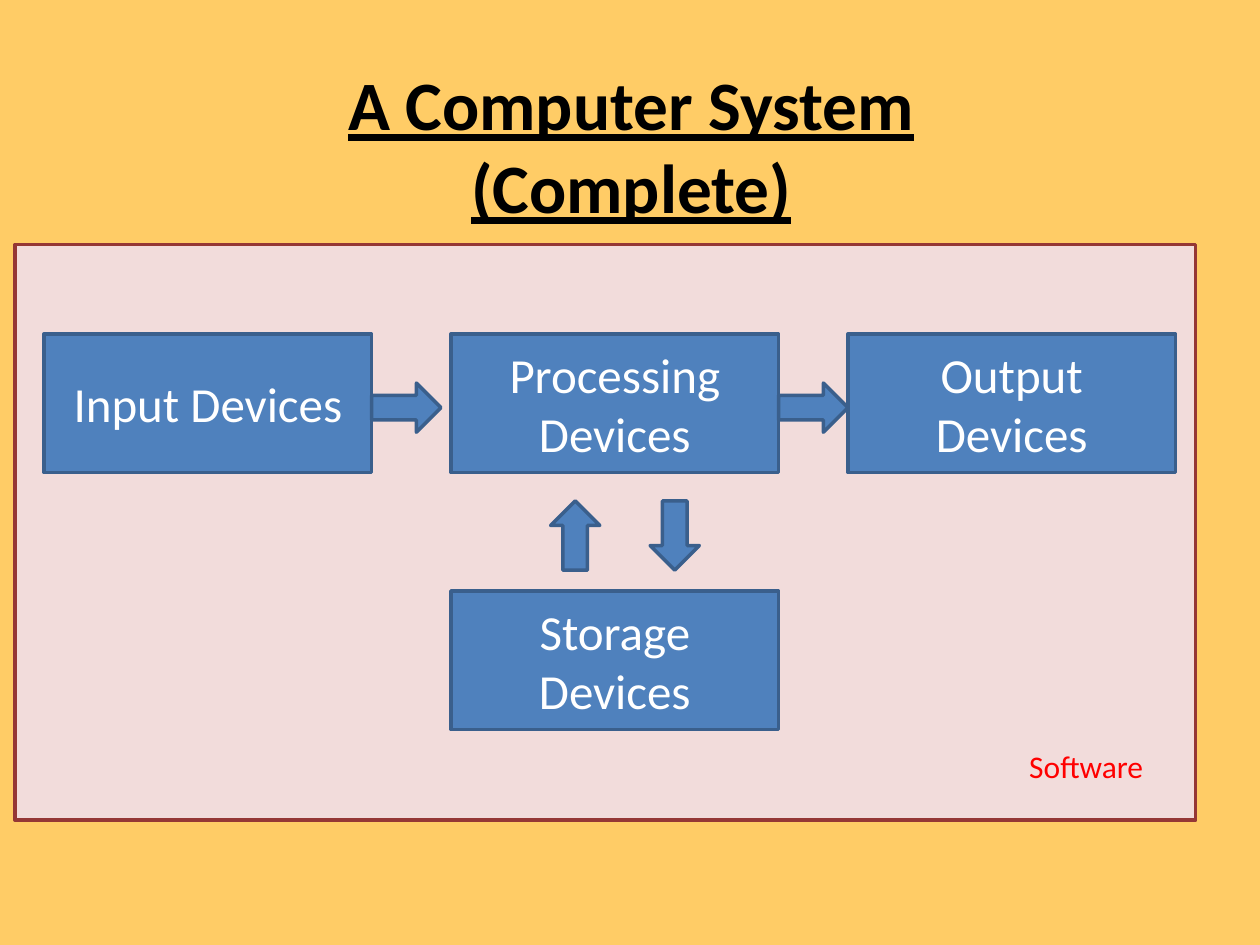
from pptx import Presentation
from pptx.dml.color import RGBColor
from pptx.enum.shapes import MSO_SHAPE
from pptx.enum.text import MSO_ANCHOR, MSO_AUTO_SIZE, PP_ALIGN
from pptx.util import Inches, Pt

COLORS = {
    "background": "FFCC66", "panel": "F2DCDB", "panel_line": "953735",
    "device": "4F81BD", "device_line": "3A5F8C",
    "title": "000000", "label": "FFFFFF", "software": "FF0000",
}
DEVICE_W, DEVICE_H = 2.6, 1.1
ARROW_W, ARROW_H = 0.55, 0.39
COLUMNS = (0.23, 3.46, 6.61)
ROWS = (0.71, 2.75)


def rgb(name):
    """Return the named palette colour."""
    return RGBColor.from_string(COLORS[name])


def set_font(p, size, color):
    """Format a paragraph in the slide's typeface."""
    p.font.name = "Calibri"
    p.font.size = Pt(size)
    p.font.color.rgb = rgb(color)


def add_block(s, kind, box, color):
    """Add a filled, outlined preset shape without shadow."""
    sp = s.shapes.add_shape(kind, *map(Inches, box))
    sp.shadow.inherit = False
    sp.fill.solid()
    sp.fill.fore_color.rgb = rgb(color)
    sp.line.color.rgb = rgb(color + "_line")
    sp.line.width = Pt(2)
    return sp


def add_title(s, box):
    """Place and format the two-line title."""
    sp = s.shapes.title
    sp.left, sp.top, sp.width, sp.height = map(Inches, box)
    tf = sp.text_frame
    tf.text = "A Computer System\v(Complete)"
    tf.vertical_anchor = MSO_ANCHOR.MIDDLE
    p = tf.paragraphs[0]
    p.alignment = PP_ALIGN.CENTER
    set_font(p, 39.6, "title")
    p.font.bold = p.font.underline = True


def add_device(s, text, x, y):
    """Add a labelled device box."""
    sp = add_block(s, MSO_SHAPE.RECTANGLE, (x, y, DEVICE_W, DEVICE_H), "device")
    tf = sp.text_frame
    tf.text = text
    tf.word_wrap = True
    tf.vertical_anchor = MSO_ANCHOR.MIDDLE
    tf.paragraphs[0].alignment = PP_ALIGN.CENTER
    set_font(tf.paragraphs[0], 28, "label")


def add_arrow(s, x, y, rotation=0):
    """Add a block arrow turned by the given angle."""
    sp = add_block(s, MSO_SHAPE.RIGHT_ARROW, (x, y, ARROW_W, ARROW_H), "device")
    sp.rotation = rotation


def add_software_label(s, box):
    """Add the caption of the software panel."""
    tf = s.shapes.add_textbox(*map(Inches, box)).text_frame
    tf.text = "Software"
    tf.word_wrap = False
    tf.auto_size = MSO_AUTO_SIZE.SHAPE_TO_FIT_TEXT
    set_font(tf.paragraphs[0], 18, "software")


def add_system(s, box):
    """Draw the device diagram within its software panel."""
    left, top, width, height = box
    add_block(s, MSO_SHAPE.RECTANGLE, box, "panel")
    xs = [left + x for x in COLUMNS]
    upper, lower = [top + y for y in ROWS]
    devices = (("Input Devices", xs[0], upper), ("Processing Devices", xs[1], upper),
               ("Storage Devices", xs[1], lower), ("Output Devices", xs[2], upper))
    for text, x, y in devices:
        add_device(s, text, x, y)
    for x in xs[:2]:
        add_arrow(s, x + DEVICE_W, upper + ARROW_H)
    middle = (upper + DEVICE_H + lower - ARROW_H) / 2 + 0.03
    for x, rotation in ((1.5, 90), (0.71, 270)):
        add_arrow(s, xs[1] + x, middle, rotation)
    add_software_label(s, (left + width - 1.42, top + height - 0.63, 1.12, 0.4))


def main():
    """Build and save the slide."""
    prs = Presentation()
    prs.slide_width, prs.slide_height = Inches(10), Inches(7.5)
    s = prs.slides.add_slide(prs.slide_layouts[5])
    s.background.fill.solid()
    s.background.fill.fore_color.rgb = rgb("background")
    add_title(s, (0.51, 0.52, 9, 1.25))
    add_system(s, (0.12, 1.94, 9.37, 4.57))
    prs.save("out.pptx")


if __name__ == "__main__":
    main()
